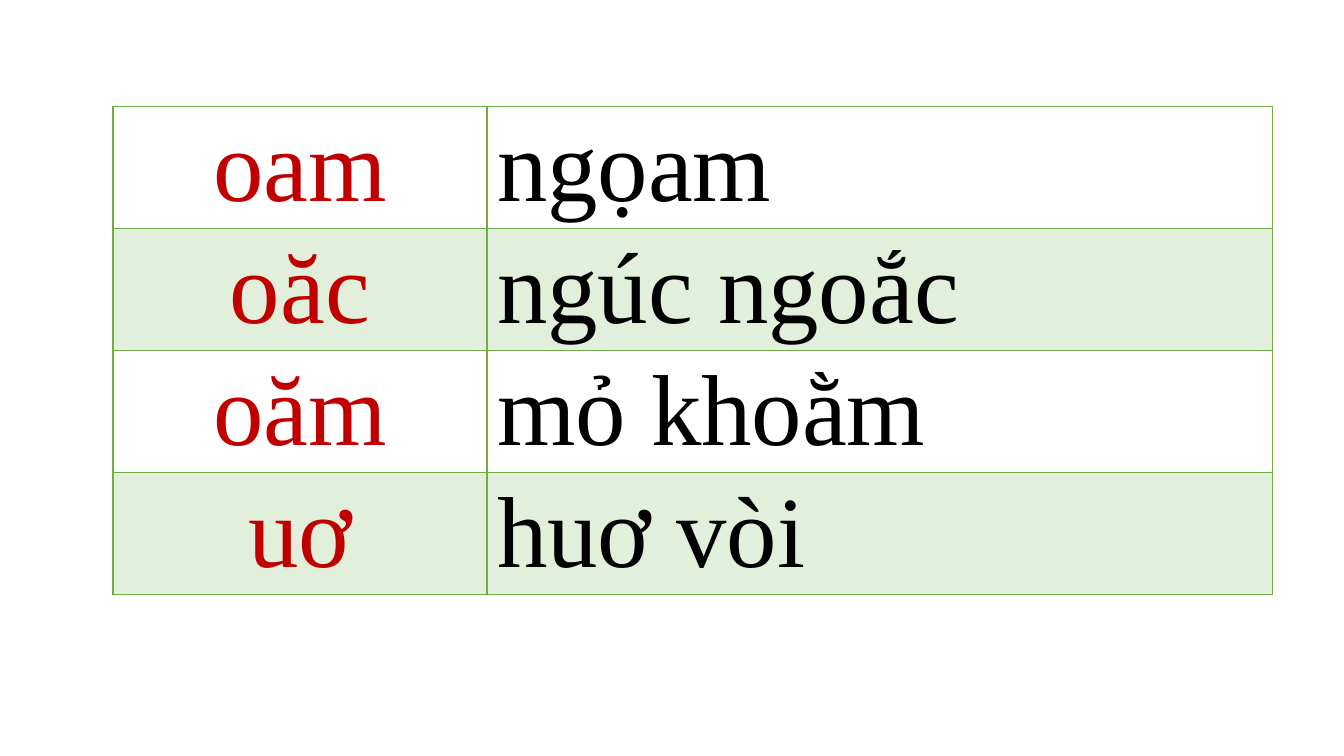
from dataclasses import dataclass

from lxml.etree import fromstring
from pptx import Presentation
from pptx.dml.color import RGBColor
from pptx.enum.text import MSO_ANCHOR, PP_ALIGN
from pptx.util import Inches, Pt

DRAWING_NAMESPACE = "http://schemas.openxmlformats.org/drawingml/2006/main"
BLANK_LAYOUT = 6


@dataclass(frozen=True)
class Theme:
    font: str = "Times New Roman"
    size: int = 72
    rhyme: str = "C00000"
    word: str = "000000"
    border: str = "70AD47"
    band: str = "E2EFDA"
    border_width: int = 1


def write_text(text_frame, text, *, font, size, color, align=PP_ALIGN.LEFT):
    paragraph = text_frame.paragraphs[0]
    paragraph.alignment = align
    run = paragraph.add_run()
    run.text = text
    run.font.name = font
    run.font.size = Pt(size)
    run.font.color.rgb = RGBColor.from_string(color)


class SlideBuilder:
    def __init__(self, slide, theme):
        self.slide = slide
        self.theme = theme

    def add_borders(self, cell):
        properties = cell._tc.get_or_add_tcPr()
        for position, side in enumerate("LRTB"):
            line = fromstring(
                f'<a:ln{side} xmlns:a="{DRAWING_NAMESPACE}" w="{Pt(self.theme.border_width)}">'
                f'<a:solidFill><a:srgbClr val="{self.theme.border}"/></a:solidFill>'
                f"</a:ln{side}>"
            )
            properties.insert(position, line)

    def format_cell(self, cell, text, color, align, banded):
        cell.vertical_anchor = MSO_ANCHOR.MIDDLE
        if banded:
            cell.fill.solid()
            cell.fill.fore_color.rgb = RGBColor.from_string(self.theme.band)
        else:
            cell.fill.background()
        self.add_borders(cell)
        write_text(cell.text_frame, text, font=self.theme.font,
                   size=self.theme.size, color=color, align=align)

    def add_word_table(self, rows, left, top, column_widths, row_height):
        table = self.slide.shapes.add_table(
            len(rows), len(column_widths), Inches(left), Inches(top),
            Inches(sum(column_widths)), Inches(row_height * len(rows)),
        ).table
        table.first_row = False
        table.horz_banding = False
        for column, width in zip(table.columns, column_widths):
            column.width = Inches(width)
        column_formats = (
            (self.theme.rhyme, PP_ALIGN.CENTER),
            (self.theme.word, PP_ALIGN.LEFT),
        )
        for row_index, texts in enumerate(rows):
            table.rows[row_index].height = Inches(row_height)
            for column_index, (text, (color, align)) in enumerate(zip(texts, column_formats)):
                self.format_cell(table.cell(row_index, column_index), text,
                                 color, align, banded=row_index % 2 == 1)


def main():
    presentation = Presentation()
    presentation.slide_width = Inches(13.33)
    presentation.slide_height = Inches(7.5)
    slide = presentation.slides.add_slide(presentation.slide_layouts[BLANK_LAYOUT])
    builder = SlideBuilder(slide, Theme())
    rhyme_words = [
        ("oam", "ngọam"),
        ("oăc", "ngúc ngoắc"),
        ("oăm", "mỏ khoằm"),
        ("uơ", "huơ vòi"),
    ]
    builder.add_word_table(rhyme_words, left=1.12, top=1.06,
                           column_widths=(3.71, 7.79), row_height=1.2)
    presentation.save("out.pptx")


if __name__ == "__main__":
    main()
